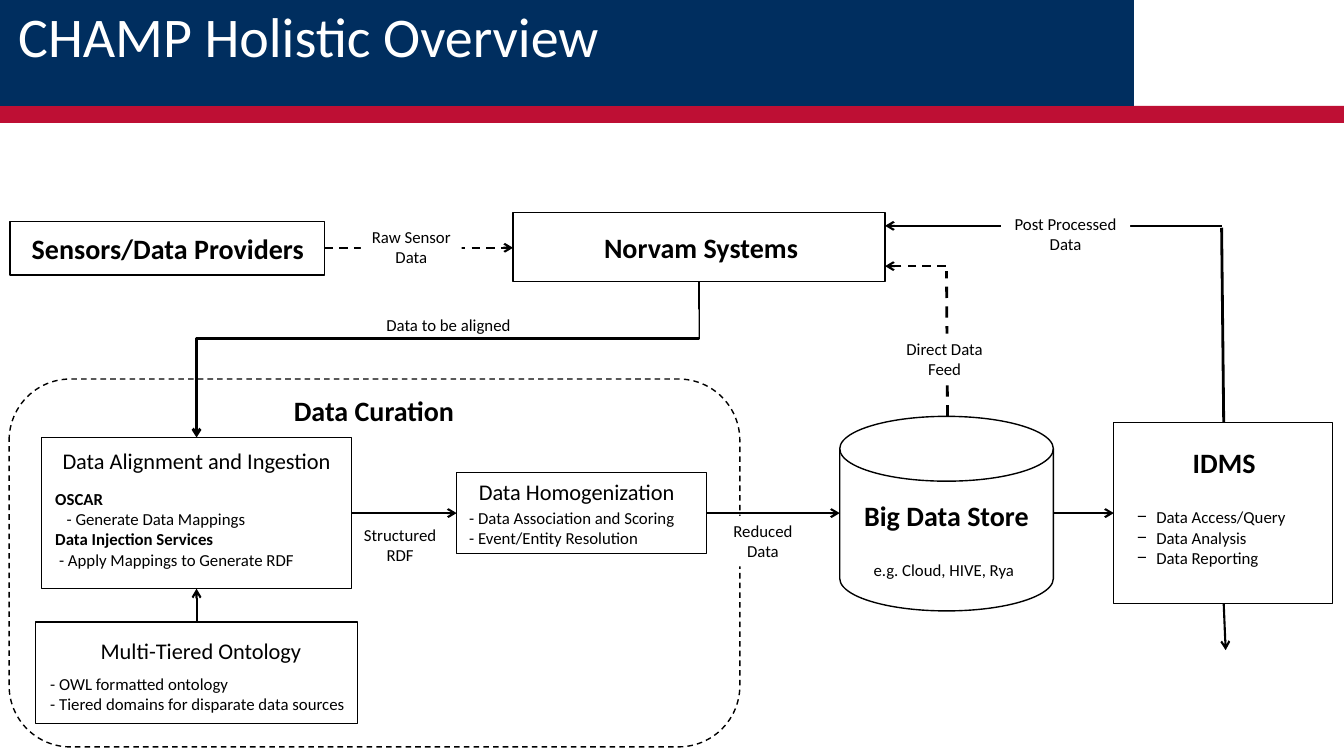
from lxml import etree
from pptx import Presentation
from pptx.dml.color import RGBColor
from pptx.enum.dml import MSO_LINE
from pptx.enum.shapes import MSO_CONNECTOR, MSO_SHAPE
from pptx.enum.text import MSO_ANCHOR, MSO_AUTO_SIZE, PP_ALIGN
from pptx.oxml.ns import qn
from pptx.util import Pt

RECT = MSO_SHAPE.RECTANGLE
ROUND = MSO_SHAPE.ROUNDED_RECTANGLE
DISK = MSO_SHAPE.FLOWCHART_MAGNETIC_DISK
LINE = MSO_CONNECTOR.STRAIGHT
ELBOW = MSO_CONNECTOR.ELBOW
DASH = MSO_LINE.DASH
SOLID = MSO_LINE.SOLID
TOP = MSO_ANCHOR.TOP
FIXED = MSO_AUTO_SIZE.NONE
LEFT = PP_ALIGN.LEFT
MID = PP_ALIGN.CENTER
BLACK, WHITE, NAVY, RED = "000000", "FFFFFF", "002E5F", "BE0F34"


def paint(fill, tone):
    fill.solid()
    fill.fore_color.rgb = RGBColor.from_string(tone)


def write(frame, rows, size, align, bold=False, tone=BLACK, mark=""):
    frame.word_wrap = True
    frame.auto_size = FIXED
    frame.vertical_anchor = TOP
    for i, (text, pad) in enumerate(rows):
        para = frame.paragraphs[0] if i == 0 else frame.add_paragraph()
        props = para._p.get_or_add_pPr()
        props.set("marL", str(Pt(pad)))
        props.set("indent", str(Pt(-pad if mark else 0)))
        if mark:
            etree.SubElement(props, qn("a:buChar")).set("char", mark)
        para.alignment = align
        para.space_before = Pt(0)
        run = para.add_run()
        run.text = text
        run.font.name = "Calibri"
        run.font.size = Pt(size)
        run.font.bold = bold or text in STRONG
        paint(run.font.fill, tone)


STRONG = ["OSCAR", "Data Injection Services"]

deck = Presentation()
deck.slide_width, deck.slide_height = Pt(960), Pt(540)
slide = deck.slides.add_slide(deck.slide_layouts[1])
shapes = slide.shapes
title, body = slide.placeholders

bars = [(0, 810, 75.6, NAVY), (75.6, 960, 12.2, RED)]
for y, w, h, tone in bars:
    bar = shapes.add_shape(RECT, 0, Pt(y), Pt(w), Pt(h))
    bar.shadow.inherit = False
    paint(bar.fill, tone)
    bar.line.fill.background()
    deck.slide_master.shapes.element.insert(2, bar.element)

title.left, title.top, title.width, title.height = Pt(5.8), Pt(2.9), Pt(804.2), Pt(69.1)
write(title.text_frame, [("CHAMP Holistic Overview", 0)], 40, LEFT, tone=WHITE)
title.text_frame.paragraphs[0].line_spacing = 0.9

boxes = {
    "idms": (RECT, 795.6, 301.7, 156.2, 129.6),
    "align": (RECT, 29.5, 312.5, 221.8, 108),
    "blend": (RECT, 326.2, 337.7, 178.6, 57.6),
    "hub": (RECT, 366.5, 151.9, 265.7, 49),
    "sensor": (RECT, 7.2, 158.4, 224.6, 38.2),
    "tiers": (RECT, 25.2, 444.2, 230.4, 72.7),
    "store": (DISK, 599.8, 297.4, 152.6, 139),
    "zone": (ROUND, 6.5, 270.7, 522, 262.8),
}
left, top, right, low, center = {}, {}, {}, {}, {}
for name, (kind, x, y, w, h) in boxes.items():
    left[name], top[name] = x, y
    right[name], low[name] = x + w, y + h
    center[name] = x + w / 2
    box = shapes.add_shape(kind, Pt(x), Pt(y), Pt(w), Pt(h))
    box.shadow.inherit = False
    paint(box.line.fill, BLACK)
    box.line.width = Pt(1)
    if kind == ROUND:
        box.fill.background()
        box.line.dash_style = DASH
    else:
        paint(box.fill, WHITE)

flow = 366.5
feed = 177
post = 161.3
back = 190.1
drop = center["align"]

links = [
    (right["align"], flow, left["blend"], flow, 1.5, SOLID, True),
    (right["blend"], flow, left["store"], flow, 1.5, SOLID, True),
    (right["store"], flow, left["idms"], flow, 1.5, SOLID, True),
    (right["sensor"], feed, left["hub"], feed, 1.5, DASH, True),
    (drop, top["tiers"], drop, low["align"], 1.5, SOLID, True),
    (874.1, low["idms"], 875.5, 464.4, 1.5, SOLID, True),
    (872.6, post, right["hub"], post, 1.5, SOLID, True),
    (874.1, top["idms"], 872.6, 162.7, 2, SOLID, False),
    (676.8, top["store"], 676.1, 193.7, 2, DASH, False),
    (675.4, back, right["hub"], back, 1.5, DASH, True),
]
wires = []
for x, y, far, deep, wide, dash, head in links:
    wire = shapes.add_connector(LINE, Pt(x), Pt(y), Pt(far), Pt(deep))
    wires.append((wire, wide, dash, head))

span = center["hub"] - drop
fall = top["align"] - low["hub"]
mid_x = (center["hub"] + drop) / 2
mid_y = (top["align"] + low["hub"]) / 2
bend = shapes.add_connector(
    ELBOW, Pt(mid_x - fall / 2), Pt(mid_y - span / 2),
    Pt(mid_x + fall / 2), Pt(mid_y + span / 2))
bend.element.spPr.find(qn("a:xfrm")).set("rot", "5400000")
guide = etree.SubElement(bend.element.spPr.find(".//" + qn("a:avLst")), qn("a:gd"))
guide.set("name", "adj1")
guide.set("fmla", "val 36500")
wires.append((bend, 2, SOLID, True))

for wire, wide, dash, head in wires:
    paint(wire.line.fill, BLACK)
    wire.line.width = Pt(wide)
    wire.line.dash_style = dash
    props = wire.element.spPr
    if head:
        etree.SubElement(props.find(qn("a:ln")), qn("a:tailEnd")).set("type", "arrow")
    etree.SubElement(props, qn("a:effectLst"))

heads = [
    ("idms", "IDMS", 0.7, 12.9, 20),
    ("zone", "Data Curation", -0.4, 6.5, 20),
    ("store", "Big Data Store", 0, 55.4, 20),
    ("hub", "Norvam Systems", 1.4, 9.4, 20),
    ("sensor", "Sensors/Data Providers", 0.4, 3.6, 20),
    ("align", "Data Alignment and Ingestion", 0, 3.6, 16),
    ("blend", "Data Homogenization", -3.6, 0, 16),
    ("tiers", "Multi-Tiered Ontology", 3.2, 7.2, 16),
    ("store", "e.g. Cloud, HIVE, Rya", -1.9, 98.6, 12),
]
for name, text, shift, down, size in heads:
    wide = right[name] - left[name]
    head = shapes.add_textbox(
        Pt(left[name] + shift), Pt(top[name] + down), Pt(wide), Pt(size * 1.2 + 7.4))
    write(head.text_frame, [(text, 0)], size, MID, bold=size == 20)

tags = [
    ("Data to be aligned", 141.8, 221, 357.2, 19.6),
    ("Raw Sensor Data", 257.8, 158.4, 72, 36),
    ("Structured RDF", 252.7, 371.5, 66.2, 36),
    ("Reduced Data", 511.9, 368.6, 66.2, 36),
    ("Post Processed Data", 715, 149, 92.2, 36),
    ("Direct Data Feed", 628.6, 238.3, 92.2, 36),
]
for text, x, y, w, h in tags:
    tag = shapes.add_textbox(Pt(x), Pt(y), Pt(w), Pt(h))
    paint(tag.fill, WHITE)
    write(tag.text_frame, [(text, 0)], 12, MID)

notes = [
    ("align", 2.9, 33.1, [
        ("OSCAR", 0),
        ("- Generate Data Mappings", 8.1),
        ("Data Injection Services", 0),
        ("- Apply Mappings to Generate RDF", 2.7),
    ]),
    ("blend", -0.8, 21.6, [
        ("- Data Association and Scoring", 2.7),
        ("- Event/Entity Resolution", 2.7),
    ]),
    ("tiers", 3.6, 33.2, [
        ("- OWL formatted ontology", 0),
        ("- Tiered domains for disparate data sources", 0),
    ]),
]
for name, shift, down, rows in notes:
    wide = right[name] - left[name] - 4
    note = shapes.add_textbox(
        Pt(left[name] + shift), Pt(top[name] + down), Pt(wide), Pt(len(rows) * 14.6 + 7.2))
    write(note.text_frame, rows, 12, LEFT)

body.left, body.top = Pt(left["idms"] + 9.4), Pt(top["idms"] + 56.9)
body.width, body.height = Pt(136.8), Pt(65.5)
tasks = ["Data Access/Query", "Data Analysis", "Data Reporting"]
write(body.text_frame, [(task, 13.7) for task in tasks], 12, LEFT, mark="−")
shapes.element.append(body.element)

deck.save("out.pptx")
